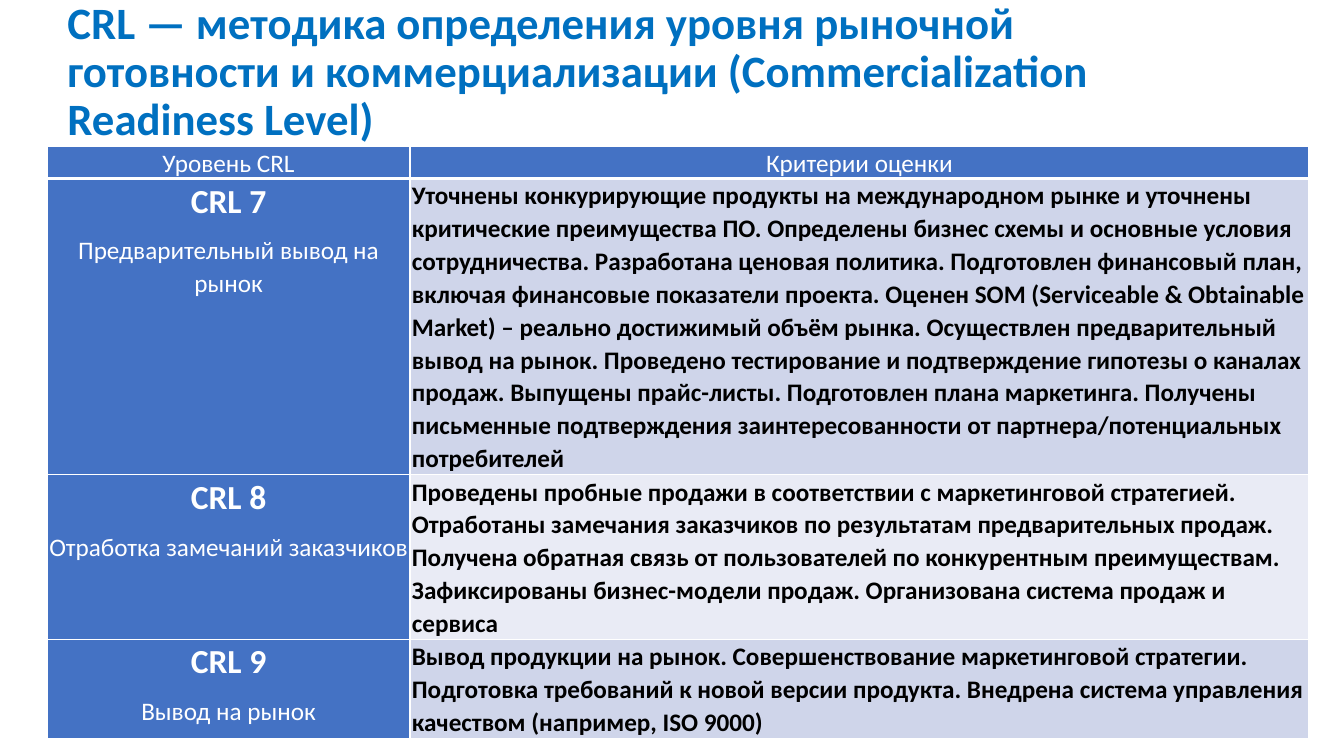
from dataclasses import dataclass

import pptx
import pptx.dml.color
import pptx.enum.text
import pptx.oxml
import pptx.oxml.ns
import pptx.table
import pptx.text.text
import pptx.util

Cm, Pt = pptx.util.Cm, pptx.util.Pt
RGBColor = pptx.dml.color.RGBColor
PP_ALIGN = pptx.enum.text.PP_ALIGN

FONT = "Calibri"
TITLE_BLUE = RGBColor(0x00, 0x70, 0xC0)
HEAD_BLUE = RGBColor(0x44, 0x72, 0xC4)
BAND_DARK = RGBColor(0xCF, 0xD5, 0xEA)
BAND_LIGHT = RGBColor(0xE9, 0xEB, 0xF5)
WHITE = RGBColor(0xFF, 0xFF, 0xFF)
BLACK = RGBColor(0x00, 0x00, 0x00)


@dataclass
class Level:
    code: str
    name: str
    criteria: str
    height: float
    band: RGBColor


@dataclass
class Line:
    text: str
    size: int = 18
    bold: bool = False
    color: RGBColor = WHITE
    align: PP_ALIGN = PP_ALIGN.CENTER


TITLE = ("CRL — методика определения уровня рыночной готовности и "
         "коммерциализации (Commercialization Readiness Level)")
HEADERS = ["Уровень СRL", "Критерии оценки"]
COL_WIDTHS = [9.14, 22.66]
HEADER_HEIGHT = 0.81
LEVELS = [
    Level("CRL 7", "Предварительный вывод на рынок",
          "Уточнены конкурирующие продукты на международном рынке и уточнены "
          "критические преимущества ПО. Определены бизнес схемы и основные условия "
          "сотрудничества. Разработана ценовая политика. Подготовлен финансовый план, "
          "включая финансовые показатели проекта. Оценен SOM (Serviceable & Obtainable "
          "Market) – реально достижимый объём рынка. Осуществлен предварительный "
          "вывод на рынок. Проведено тестирование и подтверждение гипотезы о каналах "
          "продаж. Выпущены прайс-листы. Подготовлен плана маркетинга. Получены "
          "письменные подтверждения заинтересованности от партнера/потенциальных "
          "потребителей", 7.47, BAND_DARK),
    Level("CRL 8", "Отработка замечаний заказчиков",
          "Проведены пробные продажи в соответствии с маркетинговой стратегией. "
          "Отработаны замечания заказчиков по результатам предварительных продаж. "
          "Получена обратная связь от пользователей по конкурентным преимуществам. "
          "Зафиксированы бизнес-модели продаж. Организована система продаж и "
          "сервиса", 4.14, BAND_LIGHT),
    Level("CRL 9", "Вывод на рынок",
          "Вывод продукции на рынок. Совершенствование маркетинговой стратегии. "
          "Подготовка требований к новой версии продукта. Внедрена система управления "
          "качеством (например, ISO 9000)", 2.5, BAND_DARK),
]


def write(p: pptx.text.text._Paragraph, line: Line, spacing: float) -> None:
    p.text = line.text
    p.alignment = line.align
    p.line_spacing = spacing
    for r in p.runs:
        r.font.name = FONT
        r.font.size = Pt(line.size)
        r.font.bold = line.bold
        r.font.color.rgb = line.color


def set_borders(cell: pptx.table._Cell, top: int, bottom: int) -> None:
    tc_pr = cell._tc.get_or_add_tcPr()
    for side, width in (("L", 1), ("R", 1), ("T", top), ("B", bottom)):
        tc_pr.append(pptx.oxml.parse_xml(
            f'<a:ln{side} {pptx.oxml.ns.nsdecls("a")} w="{Pt(width)}">'
            f'<a:solidFill><a:srgbClr val="{WHITE}"/></a:solidFill></a:ln{side}>'))


def fill_cell(cell: pptx.table._Cell, lines: list[Line], fill: RGBColor,
              top: int = 1, bottom: int = 1) -> None:
    set_borders(cell, top, bottom)
    cell.fill.solid()
    cell.fill.fore_color.rgb = fill
    cell.margin_left = cell.margin_right = Cm(0.05)
    cell.margin_top = cell.margin_bottom = 0
    tf = cell.text_frame
    for i, line in enumerate(lines):
        p = tf.paragraphs[0] if i == 0 else tf.add_paragraph()
        write(p, line, 1.07)
        p.space_after = Pt(8)


def main() -> None:
    prs = pptx.Presentation()
    prs.slide_width, prs.slide_height = Cm(33.87), Cm(19.05)
    slide = prs.slides.add_slide(prs.slide_layouts[6])

    # Title
    sp = slide.shapes.add_textbox(Cm(1.45), 0, Cm(29.21), Cm(3.68))
    tf = sp.text_frame
    tf.word_wrap = True
    tf.margin_top = tf.margin_bottom = 0
    tf.vertical_anchor = pptx.enum.text.MSO_ANCHOR.MIDDLE
    write(tf.paragraphs[0], Line(TITLE, 32, True, TITLE_BLUE, PP_ALIGN.LEFT), 0.9)

    # Table grid
    heights = [HEADER_HEIGHT] + [level.height for level in LEVELS]
    table = slide.shapes.add_table(
        len(heights), len(COL_WIDTHS), Cm(1.19), Cm(3.68),
        Cm(sum(COL_WIDTHS)), Cm(sum(heights))).table
    for col, width in zip(table.columns, COL_WIDTHS):
        col.width = Cm(width)
    for row, height in zip(table.rows, heights):
        row.height = Cm(height)

    # Header row
    for c, text in enumerate(HEADERS):
        fill_cell(table.cell(0, c), [Line(text)], HEAD_BLUE, bottom=3)

    # Level rows
    for i, level in enumerate(LEVELS, start=1):
        top = 3 if i == 1 else 1
        fill_cell(table.cell(i, 0), [Line(level.code, 24, True), Line(level.name)],
                  HEAD_BLUE, top)
        criteria = Line(level.criteria, 18, True, BLACK, PP_ALIGN.LEFT)
        fill_cell(table.cell(i, 1), [criteria], level.band, top)

    prs.save("out.pptx")


if __name__ == "__main__":
    main()
